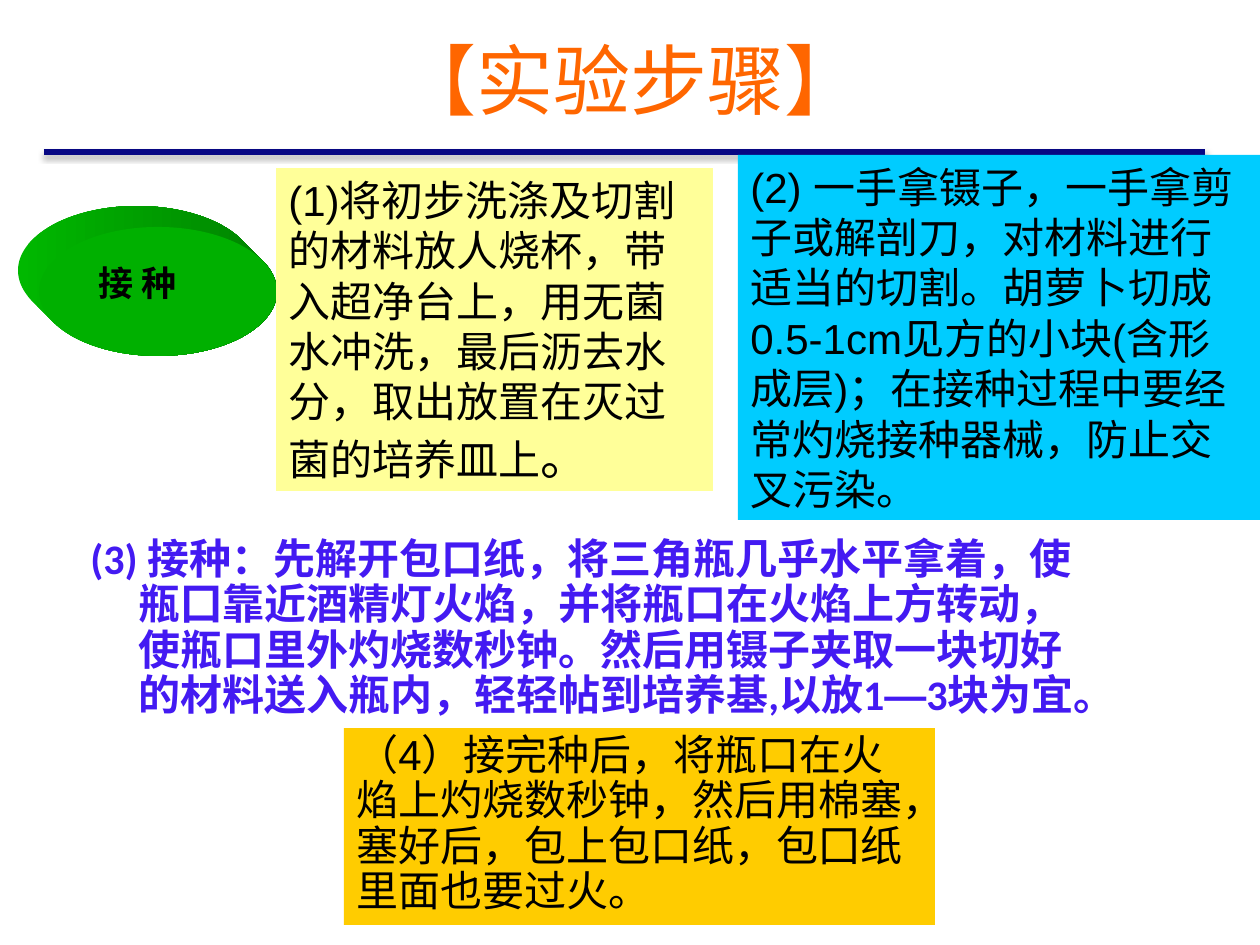
from dataclasses import dataclass
from math import cos, pi, sin

from lxml.etree import SubElement
from pptx import Presentation
from pptx.dml.color import RGBColor
from pptx.enum.shapes import MSO_CONNECTOR, MSO_SHAPE
from pptx.enum.text import MSO_ANCHOR, MSO_AUTO_SIZE, PP_ALIGN
from pptx.oxml.ns import qn
from pptx.util import Pt

EMU_PER_PX = 914400 / 126


@dataclass(frozen=True)
class Area:
    left: int
    top: int
    width: int
    height: int

    def emu(self) -> list[int]:
        return [px(value) for value in (self.left, self.top, self.width, self.height)]


@dataclass(frozen=True)
class Span:
    text: str
    size: int = 24
    font: str = "Arial"


@dataclass(frozen=True)
class Step:
    area: Area
    fill: str
    spans: tuple[Span, ...]
    spacing: float = 1.0


STEPS = (
    Step(Area(276, 168, 437, 323), "FFFF99", (
        Span("(1)将初步洗涤及切割的材料放人烧杯，带入超净台上，用无菌水冲洗，"
             "最后沥去水分，取出放置在灭过菌的培养皿上"),
        Span("。", size=28),
    )),
    Step(Area(738, 155, 522, 365), "00CCFF", (
        Span("(2) 一手拿镊子，一手拿剪子或解剖刀，对材料进行适当的切割。"
             "胡萝卜切成0.5-1cm见方的小块(含形成层)；"
             "在接种过程中要经常灼烧接种器械，防止交叉污染。"),
    )),
    Step(Area(344, 728, 591, 197), "FFCC00", (
        Span("（4）接完种后，将瓶口在火焰上灼烧数秒钟，然后用棉塞，"
             "塞好后，包上包口纸，包囗纸里面也要过火。"),
    ), spacing=0.9),
)
INOCULATION = (
    Span("(3) 接种：先解开包口纸，将三角瓶几乎水平拿着，使瓶囗靠近酒精灯火焰，"
         "并将瓶口在火焰上方转动，使瓶口里外灼烧数秒钟。然后用镊子夹取一块切好的"
         "材料送入瓶内，轻轻帖到培养基,以放1", font="Calibri"),
    Span("—"),
    Span("3块为宜。", font="Calibri"),
)


def px(value: float) -> int:
    return round(value * EMU_PER_PX)


def color(value: str) -> RGBColor:
    return RGBColor.from_string(value)


def paint(shape, fill: str) -> None:
    shape.shadow.inherit = False
    shape.fill.solid()
    shape.fill.fore_color.rgb = color(fill)
    shape.line.fill.background()


def write(box, *spans: Span, ink: str = "000000", bold: bool = False,
          align=PP_ALIGN.LEFT, anchor=MSO_ANCHOR.TOP,
          spacing: float = 1.0, hanging: int = 0) -> None:
    frame = box.text_frame
    frame.word_wrap = True
    frame.vertical_anchor = anchor
    para = frame.paragraphs[0]
    para.alignment = align
    para.line_spacing = spacing
    if hanging:
        properties = para._p.get_or_add_pPr()
        properties.set("marL", str(px(hanging)))
        properties.set("indent", str(-px(hanging)))
    for span in spans:
        run = para.add_run()
        run.text = span.text
        run.font.size = Pt(span.size)
        run.font.name = span.font
        run.font.bold = bold
        run.font.color.rgb = color(ink)


def add_text(page, area: Area, *spans: Span, **format):
    box = page.shapes.add_textbox(*area.emu())
    write(box, *spans, **format)
    return box


def add_step(page, step: Step) -> None:
    box = page.shapes.add_shape(MSO_SHAPE.RECTANGLE, *step.area.emu())
    paint(box, step.fill)
    write(box, *step.spans, spacing=step.spacing)
    box.text_frame.auto_size = MSO_AUTO_SIZE.SHAPE_TO_FIT_TEXT


def add_rule(page, left: int, right: int, top: int) -> None:
    rule = page.shapes.add_connector(
        MSO_CONNECTOR.STRAIGHT, px(left), px(top), px(right), px(top))
    rule.line.color.rgb = color("070783")
    rule.line.width = Pt(3)
    effects = SubElement(rule._element.spPr, qn("a:effectLst"))
    shadow = SubElement(effects, qn("a:outerShdw"), blurRad=str(Pt(3.1)),
                        dist=str(Pt(1.8)), dir="5400000", rotWithShape="0")
    black = SubElement(shadow, qn("a:srgbClr"), val="000000")
    SubElement(black, qn("a:alpha"), val="35000")


def add_disc(page, face: Area, depth: int) -> None:
    half_width, half_height = face.width / 2, face.height / 2
    outline = []
    for index in range(120):
        angle = 2 * pi * index / 120
        faces_front = cos(angle) / half_width + sin(angle) / half_height > 0
        shift = 0 if faces_front else depth
        outline.append((px(face.left + half_width * (1 + cos(angle)) - shift),
                        px(face.top + half_height * (1 + sin(angle)) - shift)))
    builder = page.shapes.build_freeform(*outline[0])
    builder.add_line_segments(outline[1:], close=True)
    side = builder.convert_to_shape()
    paint(side, "00A000")
    side.fill.gradient()
    side.fill.gradient_angle = 0
    for stop, shade in zip(side.fill.gradient_stops, ("00B800", "008200")):
        stop.color.rgb = color(shade)
    paint(page.shapes.add_shape(MSO_SHAPE.OVAL, *face.emu()), "00B000")


def main() -> None:
    deck = Presentation()
    deck.slide_width, deck.slide_height = px(1260), px(945)
    page = deck.slides.add_slide(deck.slide_layouts[6])
    add_rule(page, 44, 1205, 152)
    add_text(page, Area(64, 0, 1134, 158), Span("【实验步骤】", 44, "Calibri"),
             ink="FF6600", align=PP_ALIGN.CENTER, anchor=MSO_ANCHOR.MIDDLE)
    add_disc(page, Area(39, 227, 238, 129), 21)
    label = add_text(page, Area(89, 256, 176, 68), Span("接 种", 20),
                     bold=True, align=PP_ALIGN.JUSTIFY)
    frame = label.text_frame
    frame.margin_left = frame.margin_right = px(10)
    frame.margin_top = frame.margin_bottom = px(5)
    for step in STEPS[:2]:
        add_step(page, step)
    add_text(page, Area(78, 532, 1037, 207), *INOCULATION,
             ink="431AF2", bold=True, spacing=0.9, hanging=48)
    add_step(page, STEPS[2])
    deck.save("out.pptx")


if __name__ == "__main__":
    main()
